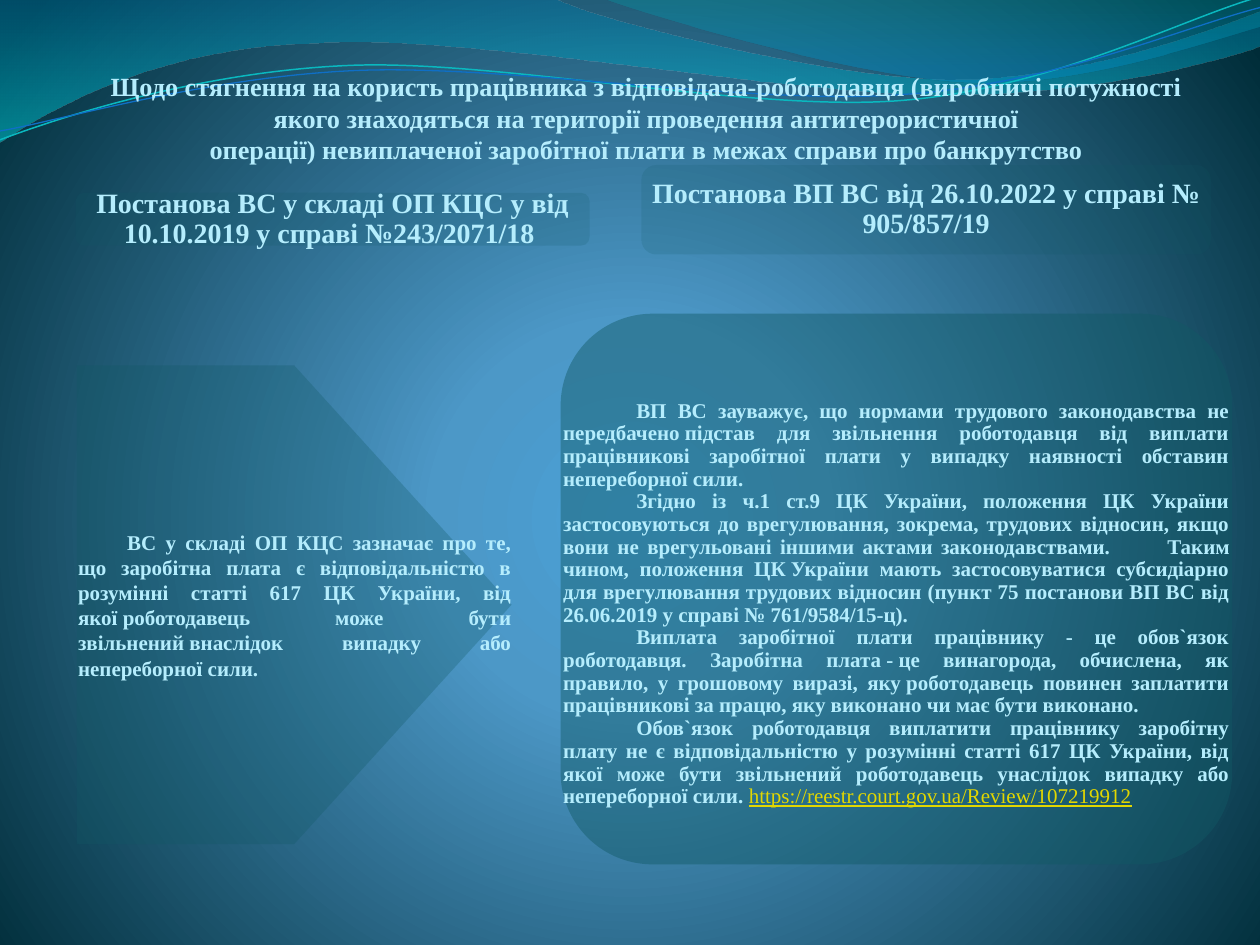
from lxml import etree
from pptx import Presentation
from pptx.dml.color import RGBColor
from pptx.enum.shapes import MSO_SHAPE as Shape
from pptx.enum.text import MSO_ANCHOR as Anchor, MSO_AUTO_SIZE as AutoSize, PP_ALIGN as Align
from pptx.oxml import parse_xml
from pptx.oxml.ns import nsdecls, qn
from pptx.util import Inches, Pt

FONT = "Times New Roman"
TEXT, PANEL, LINK = "B5EDFD", "115964", "E2D700"

# In the texts, ~ stands for a no-break space
TITLE = ("Щодо стягнення на користь працівника з відповідача-роботодавця (виробничі потужності "
         "якого знаходяться на території проведення антитерористичної "
         "операції)~невиплаченої~заробітної плати в межах справи про банкрутство")
LEFT_HEADING = "Постанова ВС у складі ОП КЦС у від 10.10.2019 у справі №243/2071/18 "
RIGHT_HEADING = "Постанова ВП ВС від 26.10.2022 у справі № 905/857/19"
LEFT_BODY = [
    "\tВС у складі ОП КЦС зазначає про те, що заробітна плата є відповідальністю в розумінні "
    "статті 617 ЦК України, від якої~роботодавець може бути звільнений~внаслідок випадку або "
    "непереборної сили."]
RIGHT_BODY = [
    "\tВП ВС зауважує, що нормами трудового законодавства не передбачено~підстав для звільнення "
    "роботодавця від виплати працівникові заробітної плати у випадку наявності обставин "
    "непереборної сили.",
    "\tЗгідно із ч.1 ст.9 ЦК України, положення ЦК України застосовуються до врегулювання, "
    "зокрема, трудових відносин, якщо вони не врегульовані іншими актами законодавствами. "
    "\tТаким чином, положення ЦК~України мають застосовуватися субсидіарно для врегулювання "
    "трудових відносин (пункт 75 постанови ВП ВС від 26.06.2019 у справі № 761/9584/15-ц).",
    "\tВиплата заробітної плати працівнику - це обов`язок роботодавця. Заробітна плата~-~це "
    "винагорода, обчислена, як правило, у грошовому виразі, яку~роботодавець повинен заплатити "
    "працівникові за працю, яку виконано чи має бути виконано. ",
    "\tОбов`язок роботодавця виплатити працівнику заробітну плату не є відповідальністю у "
    "розумінні статті 617 ЦК України, від якої може бути звільнений роботодавець унаслідок "
    "випадку або непереборної сили. "]
SOURCE_LINK = "https://reestr.court.gov.ua/Review/107219912"

# Wave outlines: start point, then lines (x, y) or curves (two controls and an end)
TOP_WAVE = [(0, 0), (4.4, -0.01), (4.76, 0.17, 6.64, 0.63, 7.58, 0.63),
            (8.53, 0.63, 9.58, 0.26, 10, 0.09), (10.01, 0.36),
            (9.83, 0.44, 8.7, 0.76, 7.46, 0.75), (6.22, 0.75, 3.82, 0.28, 2.57, 0.34),
            (1.29, 0.36, 0.46, 0.83, -0.01, 1.13)]
RIGHT_WAVE = [(4.79, -0.01), (5.09, 0.11, 6.82, 0.62, 7.69, 0.65),
              (8.56, 0.69, 9.61, 0.32, 10, 0.21), (10, 0)]
TEAL_LINE = [(0, 1.11), (0.48, 0.93, 1.58, 0.57, 2.77, 0.52),
             (3.95, 0.47, 5.93, 0.89, 7.13, 0.8), (8.33, 0.71, 9.38, 0.15, 9.98, -0.02)]
BLUE_LINE = [(0, 1.04), (0.47, 0.96, 1.64, 0.61, 2.83, 0.56),
             (4.03, 0.51, 5.97, 0.84, 7.17, 0.75), (8.36, 0.67, 9.41, 0.21, 10, 0.06)]


def color(hex_value):
    return RGBColor.from_string(hex_value)


def with_fixed_spaces(text):
    return text.replace("~", chr(160))


def gradient_xml(stops, direction):
    """Gradient from (position %, colour, opacity %) stops."""
    marks = "".join(
        f'<a:gs pos="{position * 1000}"><a:srgbClr val="{value}">'
        f'<a:alpha val="{opacity * 1000}"/></a:srgbClr></a:gs>'
        for position, value, opacity in stops)
    return f'<a:gradFill {nsdecls("a")} rotWithShape="1"><a:gsLst>{marks}</a:gsLst>{direction}</a:gradFill>'


def paint_background(slide):
    fill = gradient_xml(
        [(0, "4AA0D6", 100), (25, "4C98C7", 100), (100, "002C38", 100)],
        '<a:path path="circle"><a:fillToRect l="10000" t="110000" r="10000" b="100000"/></a:path>')
    background = parse_xml(f'<p:bg {nsdecls("p", "a")}><p:bgPr>{fill}<a:effectLst/></p:bgPr></p:bg>')
    slide.element.cSld.insert(0, background)


def add_curve(slide, outline, closed):
    """Freeform through the end points, whose segments are then bent into curves."""
    ends = [(Inches(segment[-2]), Inches(segment[-1])) for segment in outline]
    builder = slide.shapes.build_freeform(*ends[0])
    builder.add_line_segments(ends[1:], close=closed)
    shape = builder.convert_to_shape()
    shape.shadow.inherit = False
    lines = list(shape.element.iter(qn("a:lnTo")))
    for line, segment in zip(lines, outline[1:]):
        if len(segment) == 2:
            continue
        curve = etree.Element(qn("a:cubicBezTo"))
        for x, y in zip(segment[::2], segment[1::2]):
            etree.SubElement(curve, qn("a:pt"), x=str(Inches(x) - shape.left),
                             y=str(Inches(y) - shape.top))
        line.getparent().replace(line, curve)
    return shape


def add_waves(slide):
    # Translucent bands
    for outline, stops in ((TOP_WAVE, [(0, "0074A1", 45), (100, "00C6CF", 55)]),
                           (RIGHT_WAVE, [(0, "00A1A9", 30), (80, "008BBF", 45)])):
        band = add_curve(slide, outline, True)
        band.line.fill.background()
        geometry = band.element.spPr.find(qn("a:custGeom"))
        geometry.addnext(parse_xml(gradient_xml(stops, '<a:lin ang="5400000" scaled="1"/>')))
    # Thin lines
    for outline, value, width in ((TEAL_LINE, "0AB8BF", 0.85), (BLUE_LINE, "0F6FC6", 0.75)):
        line = add_curve(slide, outline, False)
        line.fill.background()
        line.line.color.rgb = color(value)
        line.line.width = Pt(width)


def format_run(run, size, value=TEXT, bold=True):
    run.font.name = FONT
    run.font.size = Pt(size)
    run.font.bold = bold
    run.font.color.rgb = color(value)


def set_frame(frame, anchor, margins):
    frame.word_wrap = True
    frame.auto_size = AutoSize.NONE
    frame.vertical_anchor = anchor
    frame.margin_left, frame.margin_top, frame.margin_right, frame.margin_bottom = map(Inches, margins)


def add_title(slide, box):
    title = slide.shapes.title
    title.left, title.top, title.width, title.height = map(Inches, box)
    title.element.getparent().append(title.element)  # in front of the waves
    frame = title.text_frame
    set_frame(frame, Anchor.BOTTOM, (0, 0, 0.02, 0))
    frame.text = with_fixed_spaces(TITLE)
    frame.paragraphs[0].alignment = Align.CENTER
    format_run(frame.paragraphs[0].runs[0], 15)


def add_panel(slide, box, kind, opacity, texts, size, margins, align, spacing=0.9, tab=1):
    """Translucent shape with a text box over its whole area."""
    box = [Inches(length) for length in box]
    shape = slide.shapes.add_shape(kind, *box)
    shape.shadow.inherit = False
    shape.line.fill.background()
    shape.fill.solid()
    shape.fill.fore_color.rgb = color(PANEL)
    fill_color = shape.element.spPr.find(qn("a:solidFill"))[0]
    etree.SubElement(fill_color, qn("a:alpha"), val=str(opacity * 1000))

    frame = slide.shapes.add_textbox(*box).text_frame
    set_frame(frame, Anchor.MIDDLE, margins)
    frame.text = with_fixed_spaces("\n".join(texts))
    for paragraph in frame.paragraphs:
        paragraph.alignment = align
        paragraph.line_spacing = spacing
        paragraph._p.get_or_add_pPr().set("defTabSz", str(Inches(tab)))
        format_run(paragraph.runs[0], size)
    return frame


def add_headings(slide):
    for box, opacity, text in (((0.6, 1.53, 4.08, 0.42), 17, LEFT_HEADING),
                               ((5.09, 1.31, 4.52, 0.71), 16, RIGHT_HEADING)):
        add_panel(slide, box, Shape.ROUNDED_RECTANGLE, opacity, [text], 16, [0.07] * 4, Align.CENTER)


def add_positions(slide):
    add_panel(slide, (0.61, 2.9, 3.45, 3.8), Shape.PENTAGON, 29, LEFT_BODY, 12,
              (0.01, 0.01, 0, 0.01), Align.JUSTIFY, spacing=1.0, tab=0.39)
    frame = add_panel(slide, (4.45, 2.49, 5.33, 4.37), Shape.FLOWCHART_ALTERNATE_PROCESS, 44,
                      RIGHT_BODY, 12, (0.02, 0.26, 0.02, 0.02), Align.JUSTIFY, tab=0.58)
    # Reference to the ruling
    run = frame.paragraphs[-1].add_run()
    run.text = SOURCE_LINK
    format_run(run, 12, LINK, bold=False)
    run.font.underline = True


def main():
    presentation = Presentation()
    presentation.slide_width, presentation.slide_height = Inches(10), Inches(7.5)
    slide = presentation.slides.add_slide(presentation.slide_layouts[5])
    paint_background(slide)
    add_waves(slide)
    add_title(slide, (0.67, 0.37, 8.94, 0.94))
    add_positions(slide)
    add_headings(slide)
    presentation.save("out.pptx")


if __name__ == "__main__":
    main()
